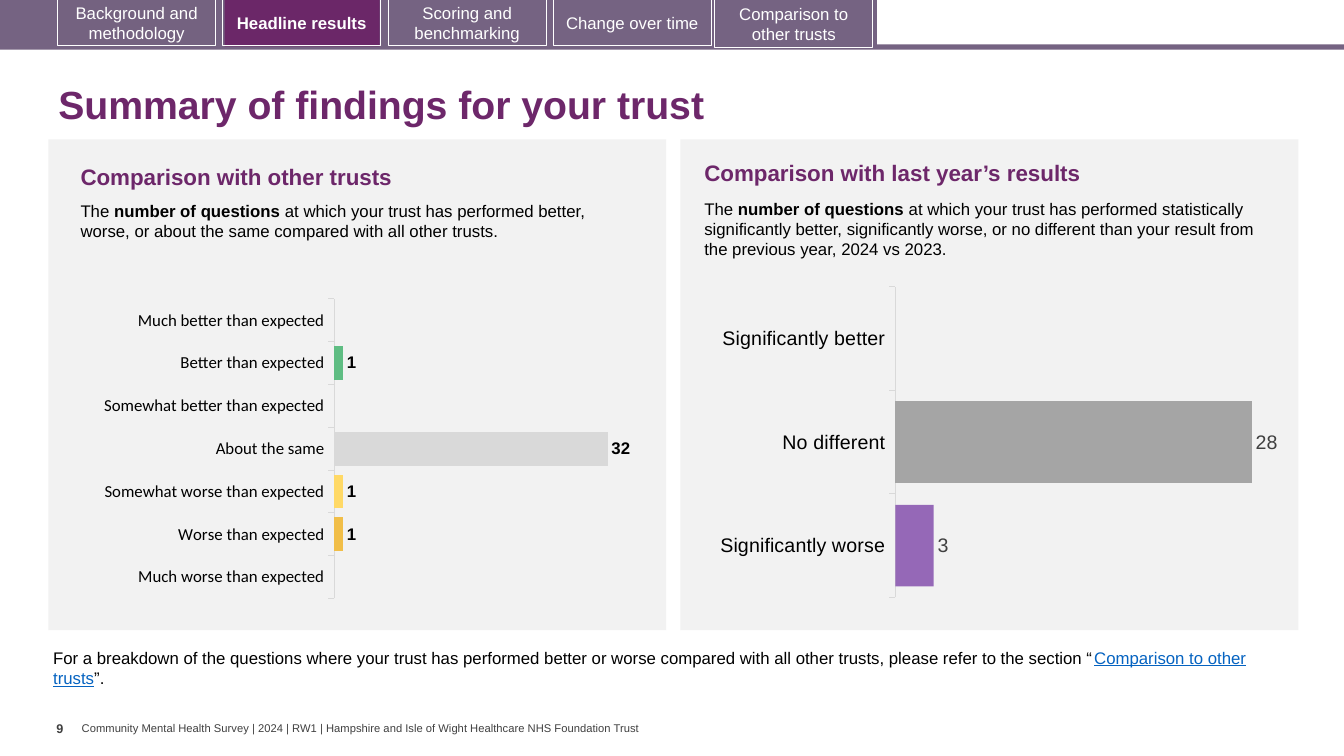
"""Build the slide that summarises the survey findings for a trust."""
import lxml.etree
import pptx
import pptx.chart.data
import pptx.dml.color
import pptx.enum.chart
import pptx.enum.shapes
import pptx.enum.text
import pptx.oxml.ns
import pptx.util

Cm = pptx.util.Cm
Pt = pptx.util.Pt
RGBColor = pptx.dml.color.RGBColor
qn = pptx.oxml.ns.qn

WHITE = RGBColor(0xFF, 0xFF, 0xFF)
BLACK = RGBColor(0, 0, 0)
DARK_GREY = RGBColor(0x40, 0x40, 0x40)
AXIS_GREY = RGBColor(0xD9, 0xD9, 0xD9)
PANEL_GREY = RGBColor(0xF2, 0xF2, 0xF2)
BAND = RGBColor(0x75, 0x63, 0x82)
TAB = RGBColor(0x74, 0x62, 0x80)
ACTIVE_TAB = RGBColor(0x6B, 0x27, 0x68)
PLUM = RGBColor(0x6D, 0x27, 0x6A)
LINK_BLUE = RGBColor(0x05, 0x63, 0xC1)
TEAL = RGBColor(0x41, 0x99, 0x99)
GREEN = RGBColor(0x5F, 0xBD, 0x83)
LIGHT_GREEN = RGBColor(0xA9, 0xD1, 0x8E)
YELLOW = RGBColor(0xFF, 0xD9, 0x66)
AMBER = RGBColor(0xF1, 0xBE, 0x48)
ORANGE = RGBColor(0xE8, 0x77, 0x22)
LIGHT_BLUE = RGBColor(0x9D, 0xC3, 0xE6)
MID_GREY = RGBColor(0xA5, 0xA5, 0xA5)
PURPLE = RGBColor(0x70, 0x30, 0xA0)

BARS = [
    ((0, 1.12, 33.87, 0.13), BAND),
    ((0, 0, 22.1, 1.19), BAND),
    ((1.5, 0, 3.91, 1.17), TAB),
    ((5.66, 0, 3.91, 1.17), ACTIVE_TAB),
]
TABS = [
    ("Background and methodology", 1.45, -0.03, TAB, False),
    ("Headline results", 5.61, -0.03, None, True),
    ("Scoring and benchmarking", 9.78, -0.03, None, False),
    ("Change over time", 13.94, -0.03, BAND, False),
    ("Comparison to other trusts", 18.01, 0, BAND, False),
]
TITLE = "Summary of findings for your trust"
NOTE = [
    ("For a breakdown of the questions where your trust has performed better or worse "
     "compared with all other trusts, please refer to the section “", {}),
    ("Comparison to other trusts", {"color": LINK_BLUE, "underline": True}),
    ("”.", {}),
]
FOOTER = ("Community Mental Health Survey | 2024 | RW1 | "
          "Hampshire and Isle of Wight Healthcare NHS Foundation Trust")
PANELS = [
    {
        "box": (1.22, 3.51, 15.57, 12.37),
        "heading": "Comparison with other trusts",
        "heading_box": (1.78, 3.99, 14.02, 0.94),
        "body": "at which your trust has performed better, worse, or about the same "
                "compared with all other trusts.",
        "body_box": (1.78, 4.93, 13.44, 1.8),
        "chart_box": (1.04, 6.91, 15.82, 8.66),
        "bars": [
            ("Much better than expected", None, TEAL),
            ("Better than expected", 1, GREEN),
            ("Somewhat better than expected", None, LIGHT_GREEN),
            ("About the same", 32, AXIS_GREY),
            ("Somewhat worse than expected", 1, YELLOW),
            ("Worse than expected", 1, AMBER),
            ("Much worse than expected", None, ORANGE),
        ],
        "maximum": 35,
        "plot": (0.467, 0.072, 0.476, 0.872),
        "axis_font": {"size": 12, "name": "Calibri"},
        "label_font": {"size": 12, "bold": True},
    },
    {
        "box": (17.15, 3.51, 15.57, 12.37),
        "heading": "Comparison with last year’s results",
        "heading_box": (17.5, 3.89, 13.92, 0.94),
        "body": "at which your trust has performed statistically significantly better, "
                "significantly worse, or no different than your result from the previous "
                "year, 2024 vs 2023.",
        "body_box": (17.5, 4.88, 14.58, 1.8),
        "chart_box": (16.87, 6.93, 15.82, 8.61),
        "bars": [
            ("Significantly better", None, LIGHT_BLUE),
            ("No different", 28, MID_GREY),
            ("Significantly worse", 3, PURPLE),
        ],
        "maximum": 30,
        "plot": (0.36, 0.035, 0.608, 0.909),
        "axis_font": {"size": 14},
        "label_font": {"size": 14, "color": DARK_GREY},
    },
]


def style_font(font, size=12, color=BLACK, bold=False, underline=False, name="Arial"):
    font.size = Pt(size)
    font.color.rgb = color
    font.bold = bold
    font.underline = underline
    font.name = name


def add_rectangle(slide, box, fill, line=None):
    shape = slide.shapes.add_shape(
        pptx.enum.shapes.MSO_SHAPE.RECTANGLE, *map(Cm, box))
    shape.shadow.inherit = False
    if fill is None:
        shape.fill.background()
    else:
        shape.fill.solid()
        shape.fill.fore_color.rgb = fill
    if line is None:
        shape.line.fill.background()
    else:
        shape.line.color.rgb = line
        shape.line.width = Pt(0.75)
    return shape


def write_text(text, shape=None, slide=None, box=None, middle=False, center=False,
               wrap=True, margins=(0.25, 0.13), line_spacing=None, **font):
    """Write a string, or a list of (string, font changes), in a shape or a new box."""
    if shape is None:
        shape = slide.shapes.add_textbox(*map(Cm, box))
    frame = shape.text_frame
    frame.word_wrap = wrap
    frame.margin_left = frame.margin_right = Cm(margins[0])
    frame.margin_top = frame.margin_bottom = Cm(margins[1])
    anchor = pptx.enum.text.MSO_ANCHOR
    frame.vertical_anchor = anchor.MIDDLE if middle else anchor.TOP
    paragraph = frame.paragraphs[0]
    align = pptx.enum.text.PP_ALIGN
    paragraph.alignment = align.CENTER if center else align.LEFT
    if line_spacing:
        paragraph.line_spacing = line_spacing
    for words, changes in [(text, {})] if isinstance(text, str) else text:
        run = paragraph.add_run()
        run.text = words
        style_font(run.font, **{**font, **changes})


def place_plot(chart, plot):
    area = chart._chartSpace.find(".//" + qn("c:plotArea"))
    for old in area.findall(qn("c:layout")):
        area.remove(old)
    layout = lxml.etree.Element(qn("c:layout"))
    area.insert(0, layout)
    manual = lxml.etree.SubElement(layout, qn("c:manualLayout"))
    settings = [("layoutTarget", "inner"), ("xMode", "edge"), ("yMode", "edge")]
    for tag, value in settings + list(zip("xywh", plot)):
        lxml.etree.SubElement(manual, qn("c:" + tag)).set("val", str(value))


def add_bar_chart(slide, panel):
    names, values, colors = zip(*panel["bars"])
    data = pptx.chart.data.CategoryChartData(number_format="0")
    data.categories = names
    data.add_series("Series 1", values)
    chart = slide.shapes.add_chart(
        pptx.enum.chart.XL_CHART_TYPE.BAR_CLUSTERED,
        *map(Cm, panel["chart_box"]), data).chart
    chart.has_legend = False
    chart.has_title = False
    style_font(chart.font, **panel["axis_font"])
    axis = chart.category_axis
    axis.reverse_order = True
    axis.has_major_gridlines = False
    axis.major_tick_mark = pptx.enum.chart.XL_TICK_MARK.OUTSIDE
    axis.format.line.color.rgb = AXIS_GREY
    axis.format.line.width = Pt(0.75)
    style_font(axis.tick_labels.font, **panel["axis_font"])
    chart.value_axis.visible = False
    chart.value_axis.has_major_gridlines = False
    chart.value_axis.minimum_scale = 0
    chart.value_axis.maximum_scale = panel["maximum"]
    plot = chart.plots[0]
    plot.gap_width = 27
    plot.vary_by_categories = False
    for index, color in enumerate(colors):
        fill = plot.series[0].points[index].format.fill
        fill.solid()
        fill.fore_color.rgb = color
        if color == PURPLE:
            srgb = fill._xPr.find(".//" + qn("a:srgbClr"))
            lxml.etree.SubElement(srgb, qn("a:alpha")).set("val", "71000")
    labels = plot.series[0].data_labels
    labels.show_value = True
    labels.number_format = "0"
    labels.number_format_is_linked = False
    labels.position = pptx.enum.chart.XL_LABEL_POSITION.OUTSIDE_END
    style_font(labels.font, **panel["label_font"])
    place_plot(chart, panel["plot"])


def main():
    presentation = pptx.Presentation()
    presentation.slide_width, presentation.slide_height = Cm(33.87), Cm(19.05)
    slide = presentation.slides.add_slide(presentation.slide_layouts[6])
    write_text(FOOTER, slide=slide, box=(2.06, 18.19, 14.22, 0.33), middle=True,
               wrap=False, margins=(0, 0), size=8, color=DARK_GREY)
    for box, color in BARS:
        add_rectangle(slide, box, color)
    for label, left, top, fill, bold in TABS:
        tab = add_rectangle(slide, (left, top, 3.99, 1.19), fill, WHITE)
        write_text(label, shape=tab, middle=True, center=True, color=WHITE, bold=bold)
    write_text(TITLE, slide=slide, box=(1.22, 1.78, 31.72, 1.83), middle=True,
               line_spacing=0.9, size=28, color=PLUM, bold=True)
    for panel in PANELS:
        add_rectangle(slide, panel["box"], PANEL_GREY)
        write_text(panel["heading"], slide=slide, box=panel["heading_box"],
                   size=16, color=PLUM, bold=True)
        write_text([("The ", {}), ("number of questions ", {"bold": True}),
                    (panel["body"], {})], slide=slide, box=panel["body_box"])
        add_bar_chart(slide, panel)
    write_text(NOTE, slide=slide, box=(1.09, 16.18, 31.01, 1.27))
    write_text("9", slide=slide, box=(1.42, 18.03, 0.64, 1.02), wrap=False,
               margins=(0, 0.13), size=9, color=DARK_GREY, bold=True)
    presentation.save("out.pptx")


if __name__ == "__main__":
    main()
